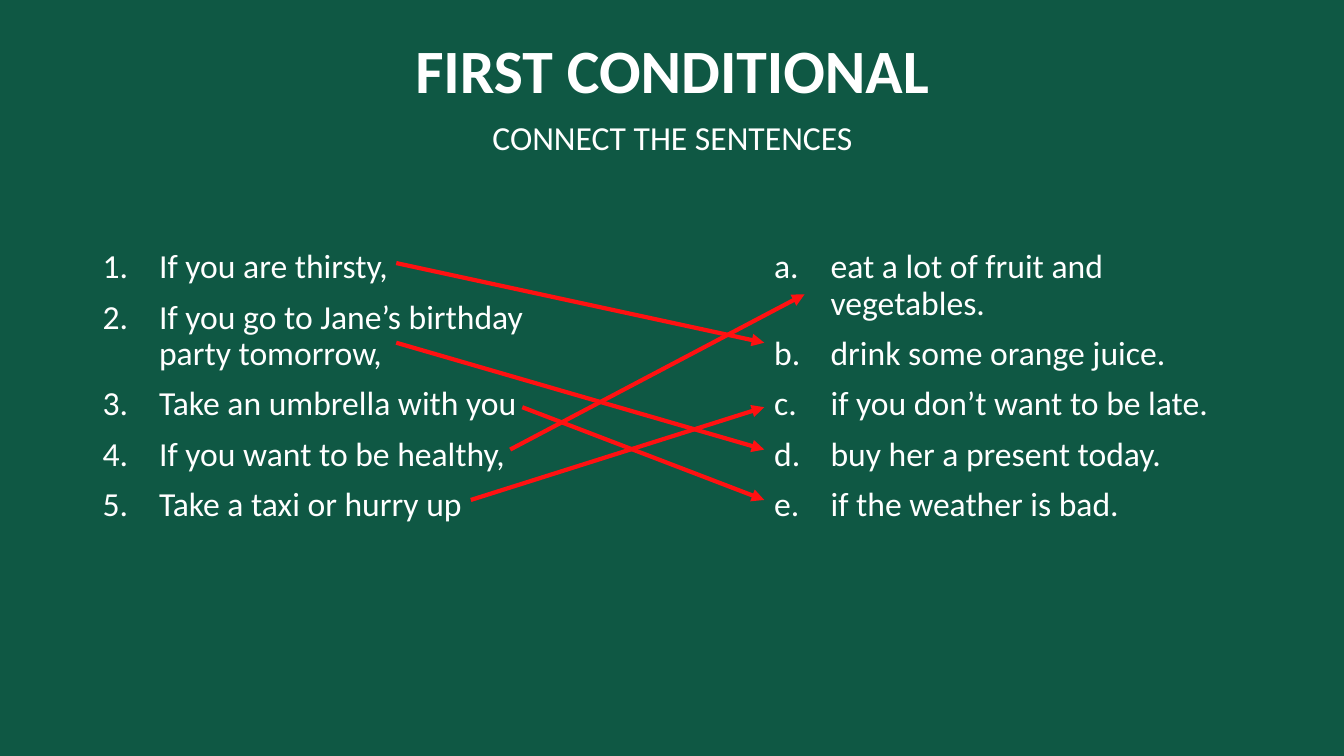
from dataclasses import dataclass

from pptx import Presentation
from pptx.dml.color import RGBColor
from pptx.enum.shapes import MSO_CONNECTOR
from pptx.enum.text import MSO_ANCHOR, PP_ALIGN
from pptx.oxml.ns import qn
from pptx.util import Inches, Pt
from lxml.etree import SubElement


@dataclass(frozen=True)
class Theme:
    board: RGBColor = RGBColor(0x0F, 0x58, 0x44)
    chalk: RGBColor = RGBColor(0xFF, 0xFF, 0xFF)
    arrow: RGBColor = RGBColor(0xFF, 0x11, 0x11)
    font: str = "Calibri"
    title_size: int = 44
    body_size: int = 24
    arrow_width: int = 3
    line_spacing: float = 0.9
    paragraph_gap: int = 10


THEME = Theme()
WIDTH, HEIGHT = 13.33, 7.5
MARGIN = 0.92
CONTENT_WIDTH = 11.5
LIST_TOP, LIST_HEIGHT = 2.43, 4.76
NUMBER_INDENT = 0.56

PROMPTS = [
    "If you are thirsty,",
    "If you go to Jane’s birthday party tomorrow,",
    "Take an umbrella with you",
    "If you want to be healthy,",
    "Take a taxi or hurry up",
]
ENDINGS = [
    "eat a lot of fruit and vegetables.",
    "drink some orange juice.",
    "if you don’t want to be late.",
    "buy her a present today.",
    "if the weather is bad.",
]
PROMPT_BOX = (MARGIN, LIST_TOP, 5.14, LIST_HEIGHT)
ENDING_BOX = (7.58, LIST_TOP, 4.84, LIST_HEIGHT)

# Anchors measured from the top left corner of each list
PROMPT_ANCHORS = [(3.01, 0.18), (3.01, 0.97), (4.26, 1.61), (4.14, 2.03), (3.75, 2.53)]
ENDING_ANCHORS = [(0.4, 0.49), (0, 0.97), (0, 1.61), (0, 2.03), (0, 2.53)]
MATCHES = ["b", "d", "e", "a", "c"]


def add_text(page, box, lines, size=THEME.body_size, bold=False,
             align=PP_ALIGN.CENTER, anchor=MSO_ANCHOR.TOP, numbering=None):
    shape = page.shapes.add_textbox(*map(Inches, box))
    frame = shape.text_frame
    frame.word_wrap = True
    frame.vertical_anchor = anchor
    frame.text = "\n".join(lines)
    for index, para in enumerate(frame.paragraphs):
        if numbering:
            add_number(para, numbering)
        para.alignment = align
        para.line_spacing = THEME.line_spacing
        if index:
            para.space_before = Pt(THEME.paragraph_gap)
        for span in para.runs:
            span.font.name = THEME.font
            span.font.size = Pt(size)
            span.font.bold = bold
            span.font.color.rgb = THEME.chalk


def add_number(para, numbering):
    properties = para._p.get_or_add_pPr()
    properties.set("marL", str(Inches(NUMBER_INDENT)))
    properties.set("indent", str(-Inches(NUMBER_INDENT)))
    SubElement(properties, qn("a:buFont"), typeface="+mj-lt")
    SubElement(properties, qn("a:buAutoNum"), type=numbering)


def add_heading(page, box):
    left, top, width, height = box
    add_text(page, box, ["FIRST CONDITIONAL"], size=THEME.title_size,
             bold=True, anchor=MSO_ANCHOR.MIDDLE)
    add_text(page, (left, top + 0.8 * height, width, 0.42), ["CONNECT THE SENTENCES"])


def add_arrow(page, start, end):
    arrow = page.shapes.add_connector(
        MSO_CONNECTOR.STRAIGHT, *map(Inches, (*start, *end)))
    arrow.line.color.rgb = THEME.arrow
    arrow.line.width = Pt(THEME.arrow_width)
    SubElement(arrow.line._get_or_add_ln(), qn("a:tailEnd"), type="triangle")
    SubElement(arrow._element.spPr, qn("a:effectLst"))


def add_matches(page, prompt_box, ending_box):
    """Joins each prompt to the ending that completes it."""
    def place(box, anchor):
        return box[0] + anchor[0], box[1] + anchor[1]

    for prompt_anchor, letter in zip(PROMPT_ANCHORS, MATCHES):
        ending_anchor = ENDING_ANCHORS["abcde".index(letter)]
        add_arrow(page, place(prompt_box, prompt_anchor), place(ending_box, ending_anchor))


def main():
    deck = Presentation()
    deck.slide_width, deck.slide_height = Inches(WIDTH), Inches(HEIGHT)
    page = deck.slides.add_slide(deck.slide_layouts[6])
    page.background.fill.solid()
    page.background.fill.fore_color.rgb = THEME.board

    add_heading(page, (MARGIN, 0, CONTENT_WIDTH, 1.45))
    add_text(page, PROMPT_BOX, PROMPTS, align=PP_ALIGN.LEFT, numbering="arabicPeriod")
    add_text(page, ENDING_BOX, ENDINGS, align=PP_ALIGN.LEFT, numbering="alphaLcPeriod")
    add_matches(page, PROMPT_BOX, ENDING_BOX)
    deck.save("out.pptx")


if __name__ == "__main__":
    main()
